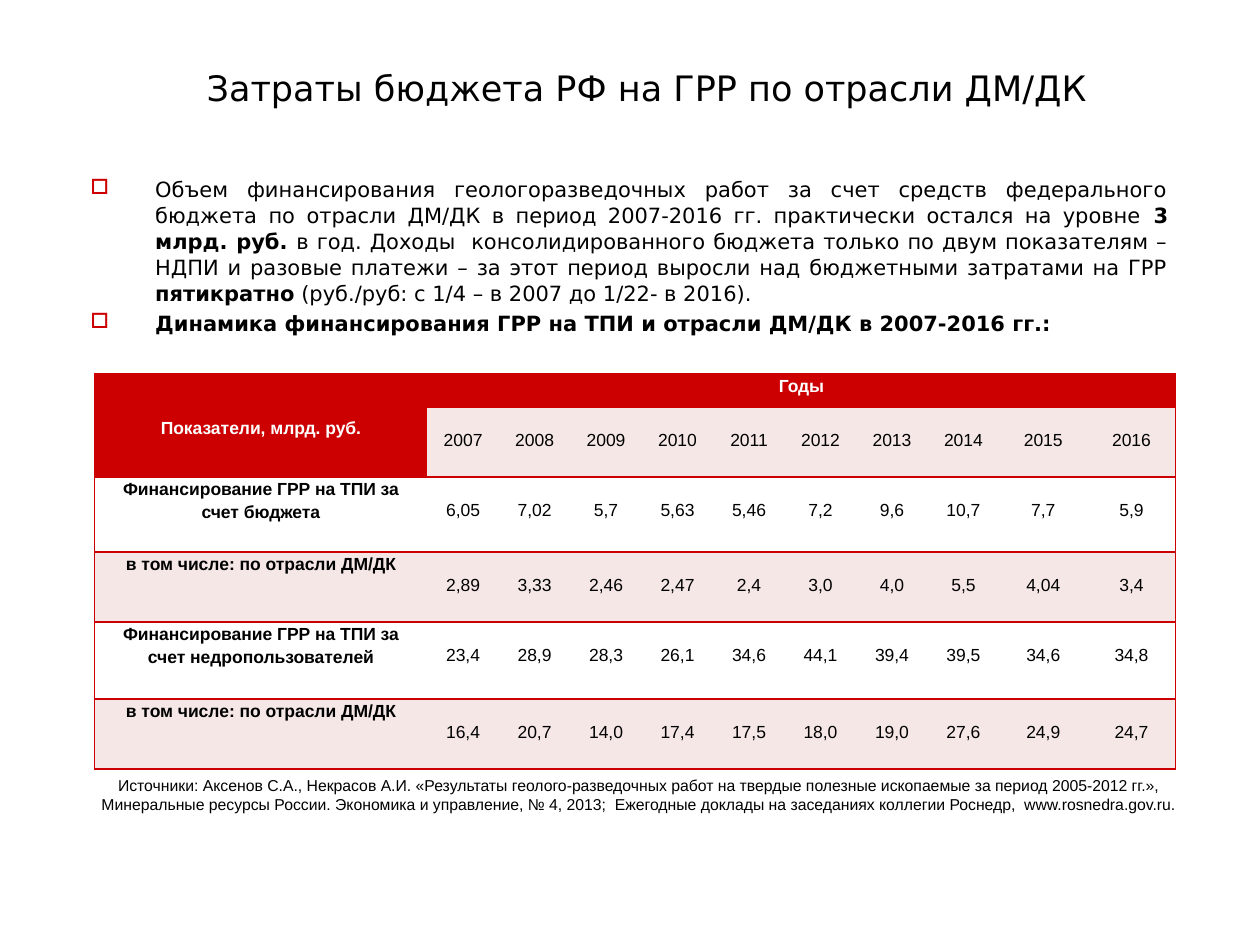
from lxml import etree
from pptx import Presentation
from pptx.dml.color import RGBColor
from pptx.enum.text import MSO_ANCHOR, PP_ALIGN
from pptx.oxml.ns import qn
from pptx.util import Pt

LEFT, CENTER, JUSTIFY = PP_ALIGN.LEFT, PP_ALIGN.CENTER, PP_ALIGN.JUSTIFY
TOP, BOTTOM = MSO_ANCHOR.TOP, MSO_ANCHOR.BOTTOM
RED, PINK, WHITE, BLACK = "CC0000", "F6E7E7", "FFFFFF", "000000"
HEADING_FONT, TABLE_FONT = "DejaVu Sans", "Arial"

TITLE = "Затраты бюджета РФ на ГРР по отрасли ДМ/ДК"
# Each bullet is a list of (text, bold) runs.
BULLETS = [
    [("Объем финансирования геологоразведочных работ за счет средств "
      "федерального бюджета по отрасли ДМ/ДК в период 2007-2016 гг. "
      "практически остался на уровне ", False),
     ("3 млрд. руб. ", True),
     ("в год. Доходы  консолидированного бюджета только по двум показателям – "
      "НДПИ и разовые платежи – за этот период выросли над бюджетными "
      "затратами на ГРР ", False),
     ("пятикратно", True),
     (" (руб./руб: с 1/4 – в 2007 до 1/22- в 2016).", False)],
    [("Динамика финансирования ГРР на ТПИ и отрасли ДМ/ДК в 2007-2016 гг.:", True)],
]
LABEL_HEADER, YEARS_HEADER = "Показатели, млрд. руб.", "Годы"
YEARS = [str(year) for year in range(2007, 2017)]
INDICATORS = [
    ("Финансирование ГРР на ТПИ за счет бюджета",
     ["6,05", "7,02", "5,7", "5,63", "5,46", "7,2", "9,6", "10,7", "7,7", "5,9"]),
    ("в том числе: по отрасли ДМ/ДК",
     ["2,89", "3,33", "2,46", "2,47", "2,4", "3,0", "4,0", "5,5", "4,04", "3,4"]),
    ("Финансирование ГРР на ТПИ за счет недропользователей",
     ["23,4", "28,9", "28,3", "26,1", "34,6", "44,1", "39,4", "39,5", "34,6", "34,8"]),
    ("в том числе: по отрасли ДМ/ДК",
     ["16,4", "20,7", "14,0", "17,4", "17,5", "18,0", "19,0", "27,6", "24,9", "24,7"]),
]
SOURCES = (
    "Источники: Аксенов С.А., Некрасов А.И. «Результаты геолого-разведочных работ "
    "на твердые полезные ископаемые за период 2005-2012 гг.», Минеральные ресурсы "
    "России. Экономика и управление, № 4, 2013;  Ежегодные доклады на заседаниях "
    "коллегии Роснедр,  www.rosnedra.gov.ru."
)

COLUMN_WIDTHS = [190.2] + [40.85] * 8 + [50.4] * 2
ROW_HEIGHTS = [19, 40, 43, 40, 44, 40]
TABLE_LEFT, TABLE_TOP = 54, 213.5
VALUE_DROP, LABEL_HEADER_DROP = 12, 24
BULLET_INDENT = 37


def rgb(value):
    return RGBColor.from_string(value)


def add_span(para, text, size, font, color=BLACK, bold=False):
    span = para.add_run()
    span.text = text
    span.font.size = Pt(size)
    span.font.name = font
    span.font.bold = bold
    span.font.color.rgb = rgb(color)


def add_box(page, left, top, width, height, anchor=TOP):
    box = page.shapes.add_textbox(Pt(left), Pt(top), Pt(width), Pt(height))
    frame = box.text_frame
    frame.word_wrap = True
    frame.vertical_anchor = anchor
    return frame


def add_bullet_mark(para):
    properties = para._p.get_or_add_pPr()
    properties.set("marL", str(Pt(BULLET_INDENT)))
    properties.set("indent", str(-Pt(BULLET_INDENT)))
    color = etree.SubElement(properties, qn("a:buClr"))
    etree.SubElement(color, qn("a:srgbClr"), val=RED)
    etree.SubElement(properties, qn("a:buChar"), char="□")


def set_borders(cell, red_sides):
    """Draw the sides named in red_sides (letters of LRTB) and hide the others."""
    properties = cell._tc.get_or_add_tcPr()
    for side in "LRTB":
        line = etree.SubElement(properties, qn(f"a:ln{side}"), w=str(Pt(1)))
        if side in red_sides:
            fill = etree.SubElement(line, qn("a:solidFill"))
            etree.SubElement(fill, qn("a:srgbClr"), val=RED)
        else:
            etree.SubElement(line, qn("a:noFill"))


def fill_cell(cell, text, drop=0, color=BLACK, bold=False):
    cell.margin_top = Pt(drop)
    para = cell.text_frame.paragraphs[0]
    para.alignment = CENTER
    para.line_spacing = 1.15
    add_span(para, text, 10, TABLE_FONT, color, bold)


def add_budget_table(page):
    frame = page.shapes.add_table(
        len(ROW_HEIGHTS), len(COLUMN_WIDTHS), Pt(TABLE_LEFT), Pt(TABLE_TOP),
        Pt(sum(COLUMN_WIDTHS)), Pt(sum(ROW_HEIGHTS)))
    table = frame.table
    table.first_row = table.horz_banding = False
    for column, width in zip(table.columns, COLUMN_WIDTHS):
        column.width = Pt(width)
    last_column = len(COLUMN_WIDTHS) - 1

    for r, height in enumerate(ROW_HEIGHTS):
        table.rows[r].height = Pt(height)
        for c in range(last_column + 1):
            cell = table.cell(r, c)
            sides = "TB" + ("L" if c == 0 else "") + ("R" if c == last_column else "")
            set_borders(cell, sides)
            is_header = r == 0 or (r == 1 and c == 0)
            cell.fill.solid()
            cell.fill.fore_color.rgb = rgb(RED if is_header else PINK if r % 2 else WHITE)
            cell.margin_left = cell.margin_right = Pt(5)
            cell.margin_top = cell.margin_bottom = 0

    table.cell(0, 0).merge(table.cell(1, 0))
    table.cell(0, 1).merge(table.cell(0, last_column))
    fill_cell(table.cell(0, 0), LABEL_HEADER, LABEL_HEADER_DROP, WHITE, True)
    fill_cell(table.cell(0, 1), YEARS_HEADER, 0, WHITE, True)
    for r, (label, values) in enumerate([(None, YEARS)] + INDICATORS, start=1):
        if label:
            fill_cell(table.cell(r, 0), label, bold=True)
        for c, value in enumerate(values, start=1):
            fill_cell(table.cell(r, c), value, VALUE_DROP)


def main():
    deck = Presentation()
    deck.slide_width, deck.slide_height = Pt(720), Pt(540)
    page = deck.slides.add_slide(deck.slide_layouts[6])

    title = add_box(page, 111, 26, 525, 39.6, BOTTOM).paragraphs[0]
    title.alignment = LEFT
    add_span(title, TITLE, 20, HEADING_FONT)

    body = add_box(page, 44.6, 97.2, 630, 376.6)
    for index, spans in enumerate(BULLETS):
        para = body.add_paragraph() if index else body.paragraphs[0]
        add_bullet_mark(para)
        para.alignment = JUSTIFY
        para.line_spacing = 1.03
        para.space_before = Pt(2.4 if index else 0)
        for text, bold in spans:
            add_span(para, text, 12, HEADING_FONT, bold=bold)

    add_budget_table(page)

    sources = add_box(page, 31, 440, 667.4, 28.8).paragraphs[0]
    sources.alignment = CENTER
    add_span(sources, SOURCES, 9, TABLE_FONT)

    deck.save("out.pptx")


if __name__ == "__main__":
    main()
